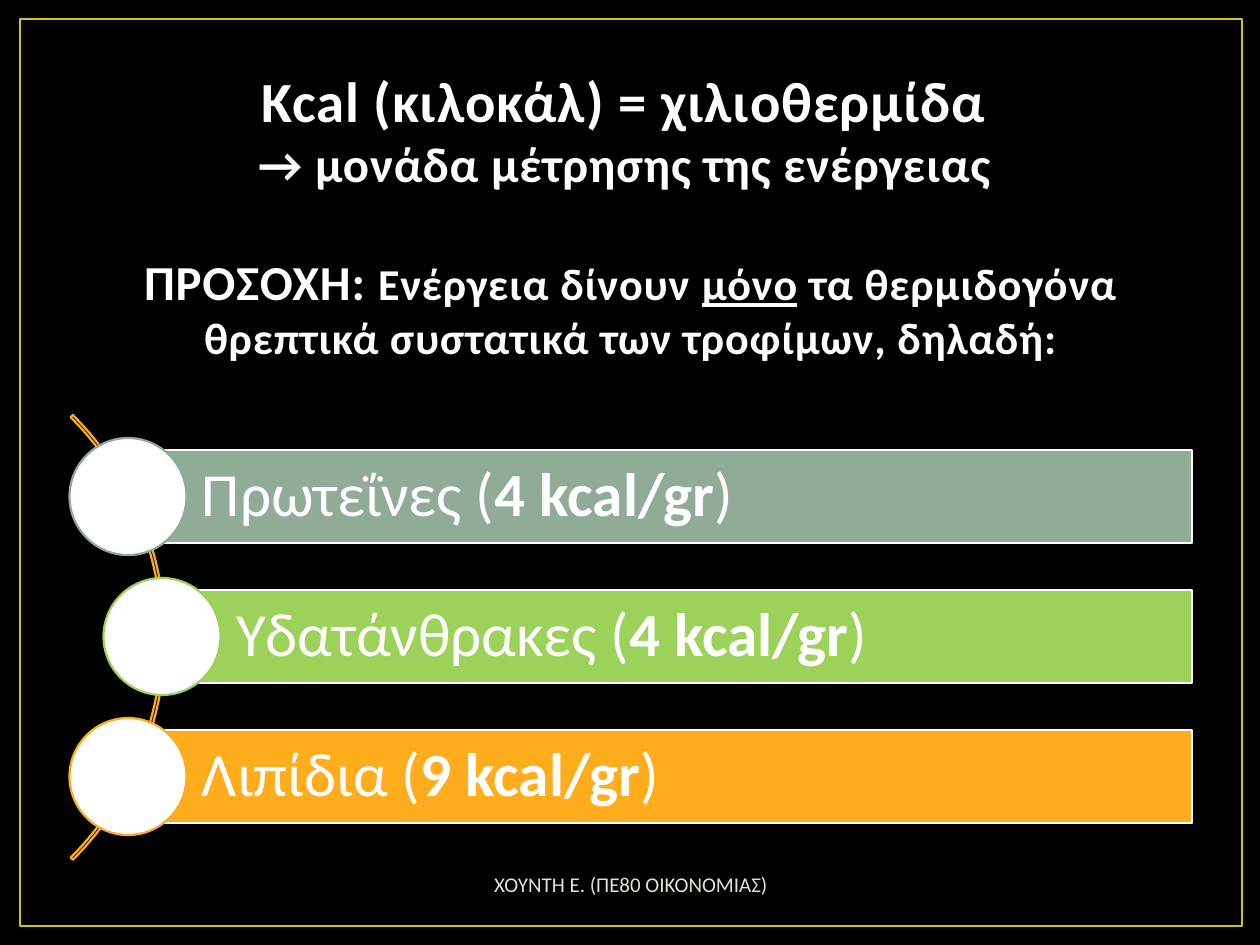
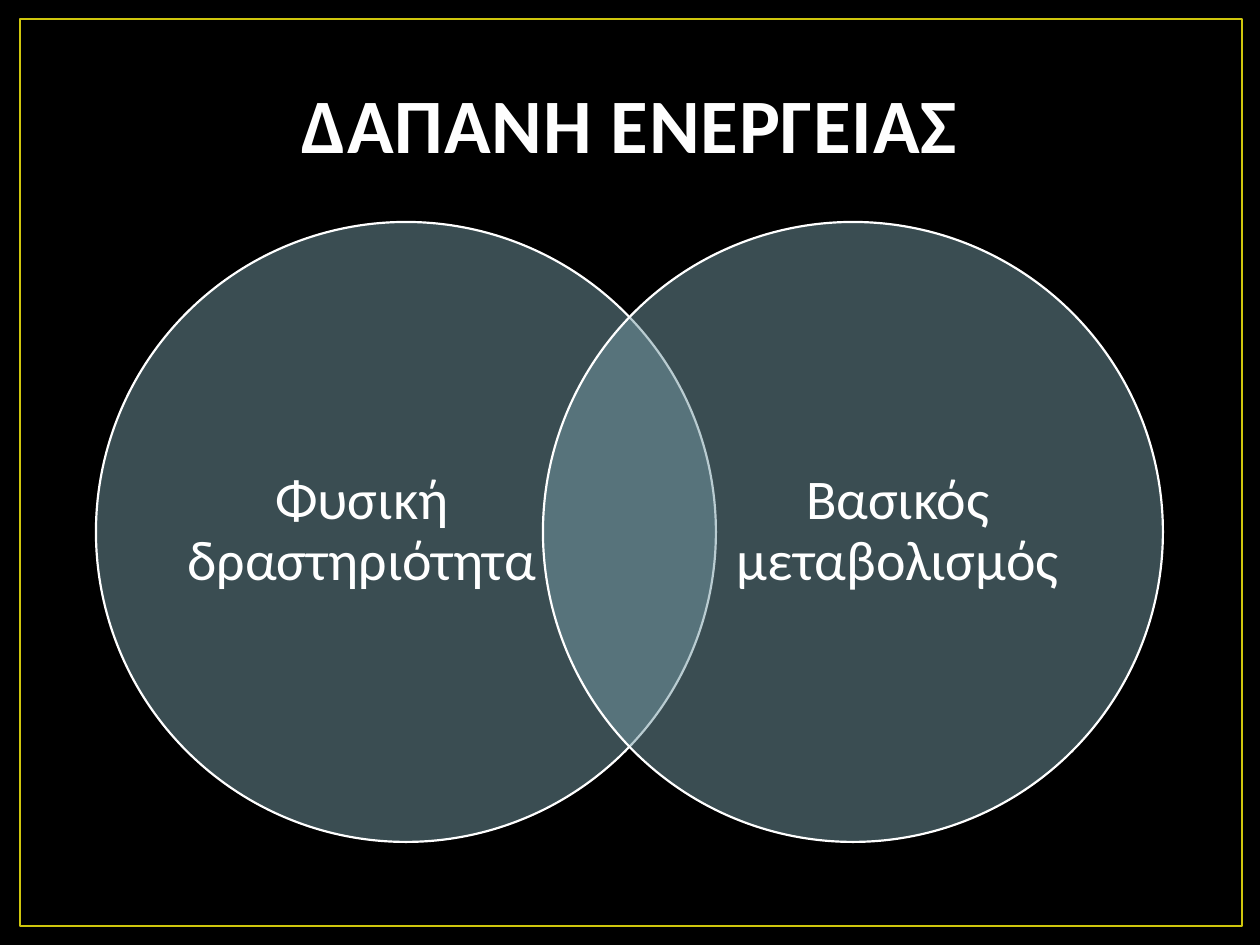
from lxml.etree import SubElement
from pptx import Presentation
from pptx.dml.color import RGBColor
from pptx.enum.shapes import MSO_SHAPE
from pptx.enum.text import MSO_ANCHOR, PP_ALIGN
from pptx.oxml.ns import qn
from pptx.util import Emu, Pt

# Content: a text is a list of paragraphs, each a list of (words, size, styles)
ENERGY_TITLE = [
    [("Kcal (κιλοκάλ) = χιλιοθερμίδα ", 32.4, "b")],
    [("→ μονάδα μέτρησης της ενέργειας ", 27.9, "b")],
    [("ΠΡΟΣΟΧΗ: ", 27.9, "b"), ("Ενέργεια δίνουν ", 25.2, "b"), ("μόνο", 25.2, "bu"),
     (" τα θερμιδογόνα θρεπτικά συστατικά των τροφίμων, δηλαδή:", 25.2, "b")],
]
NUTRIENTS = [  # name, energy, colour, indent
    ("Πρωτεΐνες", "4 kcal/gr", "sage", 0),
    ("Υδατάνθρακες", "4 kcal/gr", "green", 34),
    ("Λιπίδια", "9 kcal/gr", "orange", 0),
]
FOOTER = "ΧΟΥΝΤΗ Ε. (ΠΕ80 ΟΙΚΟΝΟΜΙΑΣ)"
SPENDING_TITLE = [[("ΔΑΠΑΝΗ ΕΝΕΡΓΕΙΑΣ", 44, "b")]]
SPENDING = [("Φυσική δραστηριότητα", 183), ("Βασικός μεταβολισμός", 719)]  # text, text left

COLOURS = {
    "black": "000000", "white": "FFFFFF", "title": "FEFEFE", "frame": "CFC60D",
    "footer": "DFE6D0", "sage": "90AC97", "green": "9CD25A", "orange": "FFAD1C",
    "slate": "759AA5",
}
FONT = "Calibri"
SCALE = 914400 / 126


def px(length):
    return Emu(round(length * SCALE))


def colour(name):
    return RGBColor.from_string(COLOURS[name])


def add_figure(page, kind, left, top, width, height, line, fill=None, weight=1.25, alpha=None):
    shape = page.shapes.add_shape(kind, px(left), px(top), px(width), px(height))
    shape.shadow.inherit = False
    shape.line.color.rgb = colour(line)
    shape.line.width = Pt(weight)
    if fill is None:
        shape.fill.background()
    else:
        shape.fill.solid()
        shape.fill.fore_color.rgb = colour(fill)
    if alpha is not None:
        tint = shape.fill._xPr.find(qn("a:solidFill"))[0]
        SubElement(tint, qn("a:alpha")).set("val", str(alpha * 1000))
    return shape


def add_text(page, place, paragraphs, ink, insets=(13, 6, 13, 6), align=PP_ALIGN.CENTER,
             anchor=MSO_ANCHOR.MIDDLE, spacing=None, tracking=None):
    box = page.shapes.add_textbox(*map(px, place))
    frame = box.text_frame
    frame.word_wrap = True
    frame.vertical_anchor = anchor
    (frame.margin_left, frame.margin_top,
     frame.margin_right, frame.margin_bottom) = map(px, insets)
    for index, parts in enumerate(paragraphs):
        para = frame.add_paragraph() if index else frame.paragraphs[0]
        para.alignment = align
        if spacing:
            para.line_spacing = spacing
        for words, size, styles in parts:
            span = para.add_run()
            span.text = words
            span.font.name = FONT
            span.font.size = Pt(size)
            span.font.bold = "b" in styles
            span.font.underline = "u" in styles
            span.font.color.rgb = colour(ink)
            if tracking:
                span._r.get_or_add_rPr().set("spc", str(tracking))
    return frame


def add_page(deck, title, title_place, insets=(13, 6, 13, 6)):
    """Black page with the yellow frame and a title; returns page and title text."""
    page = deck.slides.add_slide(deck.slide_layouts[6])
    page.background.fill.solid()
    page.background.fill.fore_color.rgb = colour("black")
    add_figure(page, MSO_SHAPE.RECTANGLE, 20, 19, 1222, 907, "frame", weight=1.5)
    heading = add_text(page, title_place, title, "title", insets,
                       anchor=MSO_ANCHOR.BOTTOM, tracking=50)
    return page, heading


def build_energy_page(deck):
    page, heading = add_page(deck, ENERGY_TITLE, (64, 66, 1134, 356), (13, 0, 13, 59))
    heading.paragraphs[2].space_before = Pt(34)

    # Curve behind the discs
    arc = add_figure(page, MSO_SHAPE.BLOCK_ARC, -464, 323, 629, 629, "orange")
    for index, value in enumerate((189, 27, 0.005)):
        arc.adjustments[index] = value

    # Nutrient bars, each with a disc at its left end
    right, height, disc = 1192, 93, 117
    for row, (name, energy, tone, indent) in enumerate(NUTRIENTS):
        left, top = 128 + indent, 450 + 140 * row
        place = (left, top, right - left, height)
        add_figure(page, MSO_SHAPE.RECTANGLE, *place, "white", tone)
        label = [(f"{name} (", 35, ""), (energy, 35, "b"), (")", 35, "")]
        add_text(page, place, [label], "white", (74, 13, 13, 13), PP_ALIGN.LEFT, spacing=0.9)
        add_figure(page, MSO_SHAPE.OVAL, left - disc / 2, top + (height - disc) / 2,
                   disc, disc, tone, "white")

    # Footer
    add_text(page, (391, 859, 480, 50), [[(FOOTER, 12, "")]], "footer")


def build_spending_page(deck):
    page, _ = add_page(deck, SPENDING_TITLE, (63, 38, 1134, 137))

    # Overlapping circles
    for column, (words, text_left) in enumerate(SPENDING):
        add_figure(page, MSO_SHAPE.OVAL, 96 + 447 * column, 222, 620, 620,
                   "white", "slate", alpha=50)
        add_text(page, (text_left, 295, 358, 474), [[(words, 32, "")]], "white",
                 (0, 0, 0, 0), spacing=0.9)


def main():
    deck = Presentation()
    deck.slide_width, deck.slide_height = px(1260), px(945)
    build_energy_page(deck)
    build_spending_page(deck)
    deck.save("out.pptx")


if __name__ == "__main__":
    main()
